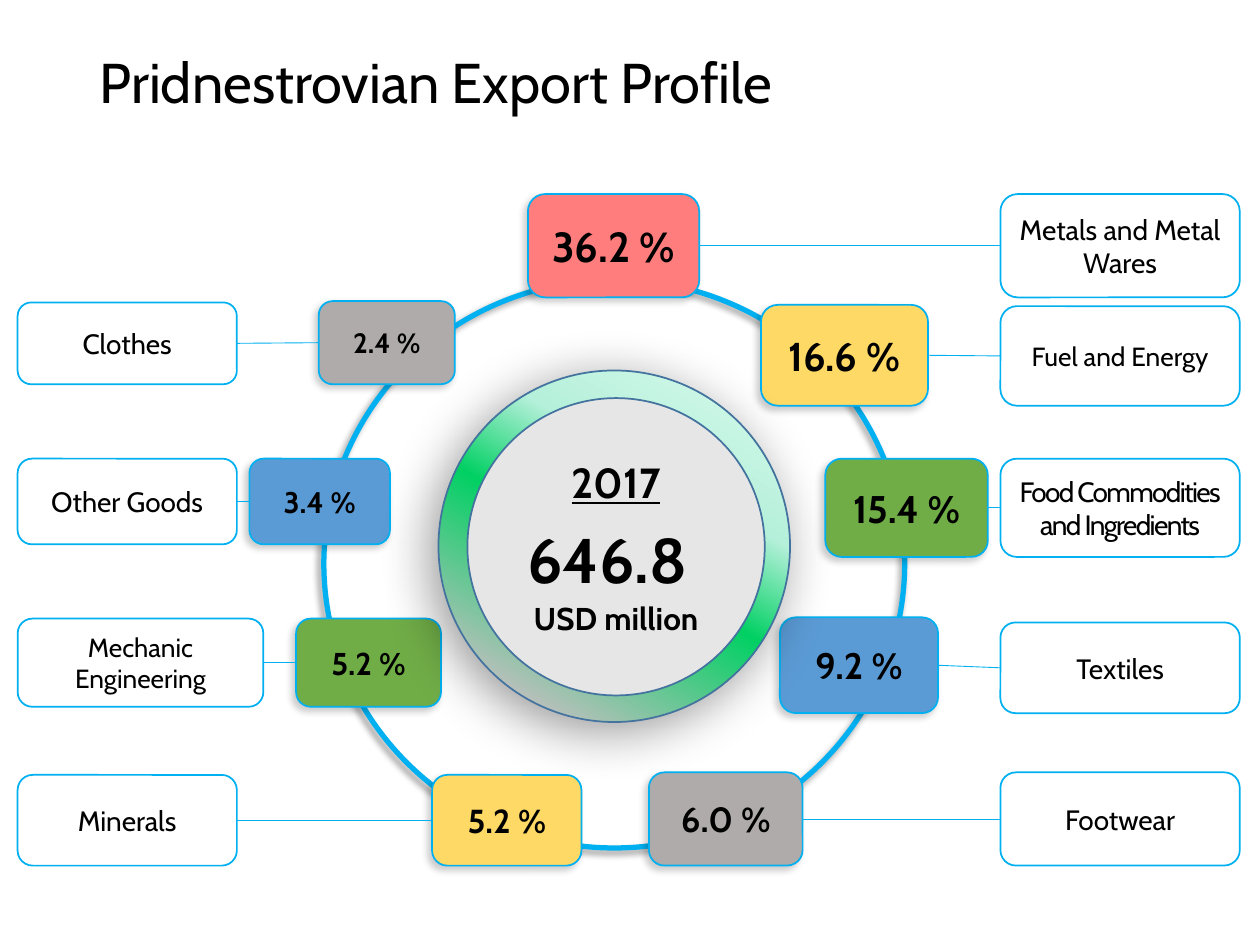
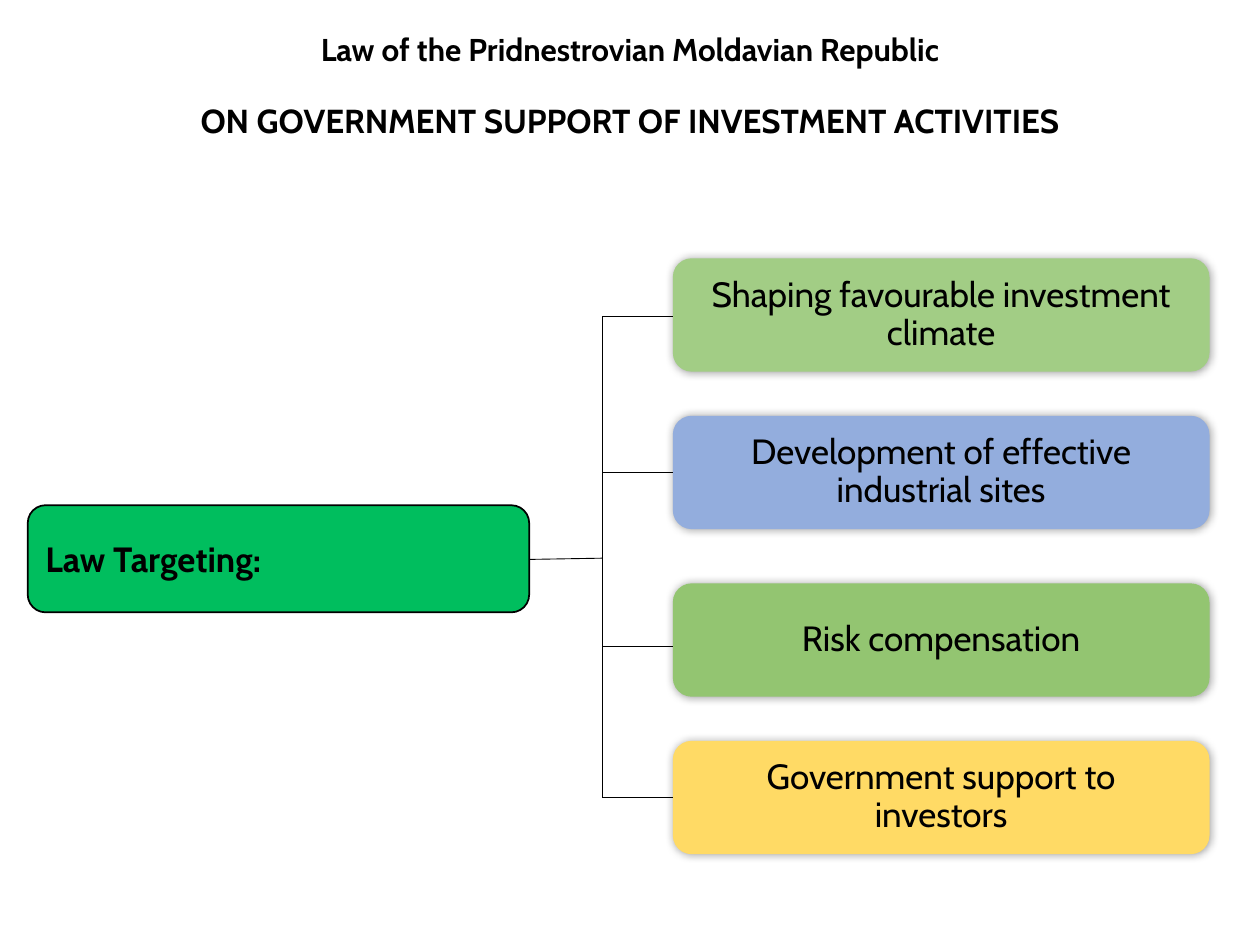
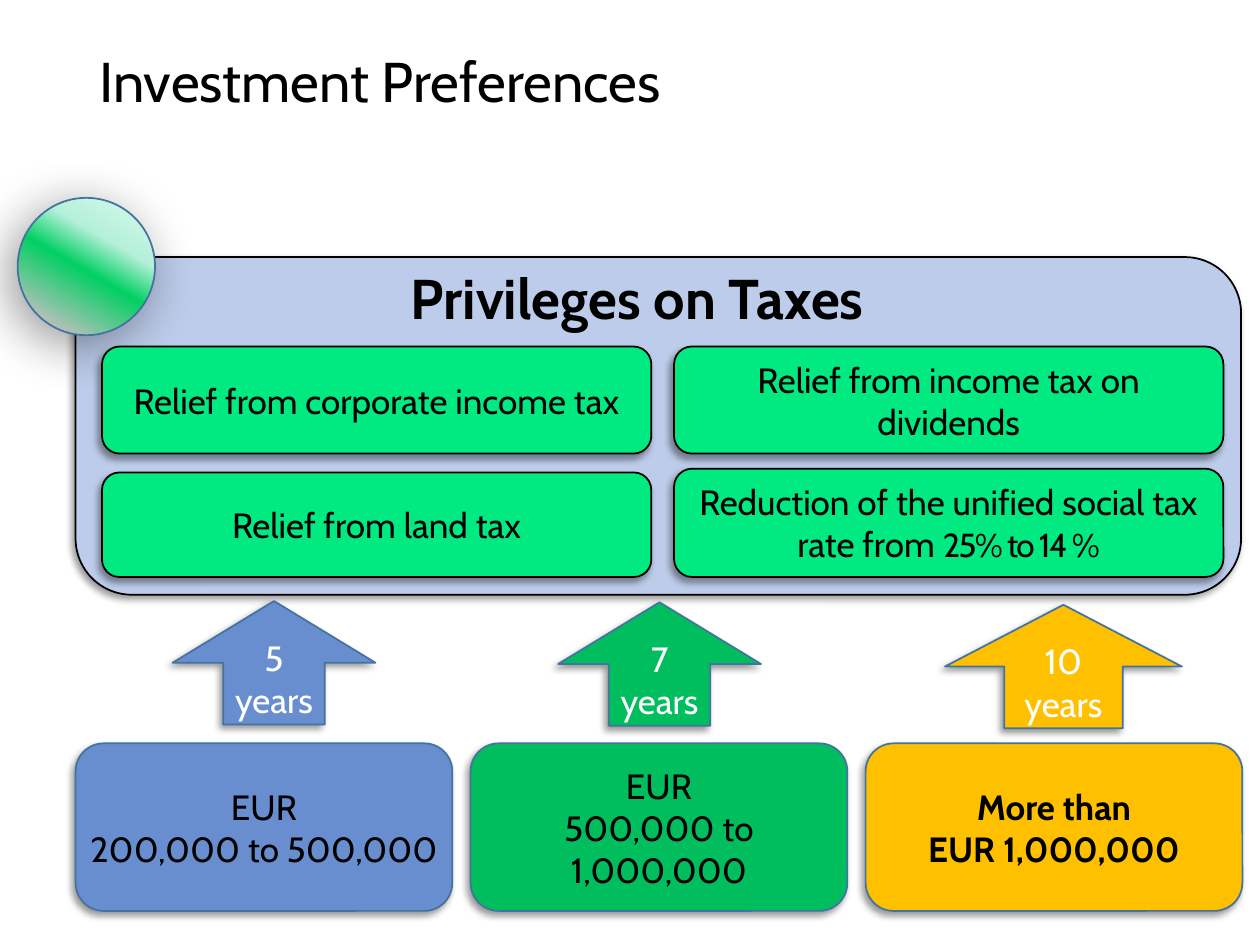
from copy import deepcopy

from lxml import etree
from pptx import Presentation
from pptx.dml.color import RGBColor
from pptx.enum import shapes, text
from pptx.oxml.ns import qn
from pptx.util import Inches, Pt

FONT = "Cabin"
COLOURS = {
    "black": "000000", "white": "FFFFFF", "sky": "00B0F0", "navy": "43739E",
    "red": "FF7D7D", "yellow": "FFD966", "green": "70AD47", "blue": "5B9BD5",
    "grey": "AFABAB", "pale grey": "E7E6E6", "emerald": "00BE5E",
    "mint": "01EA81", "leaf": "A2CD85", "periwinkle": "93ADDD",
    "moss": "93C571", "gold": "FFDA65", "lavender": "BCCCEA",
    "cobalt": "698ED0", "amber": "FFC000",
}
SPHERE_STOPS = [(0.12, "BFBFBF"), (0.48, "01D063"), (0.68, "B5F0DA"), (1, "DAFAED")]

# Shadows: opacity in percent, blur and distance in points, direction in degrees
LIGHT = (20, 4, 3, 135)
SOFT = (40, 4, 3, 135)
HALO = (40, 5, 0, 0)
DEEP = (40, 30, 7, 135)

RECT = shapes.MSO_SHAPE.ROUNDED_RECTANGLE
OVAL = shapes.MSO_SHAPE.OVAL
ARROW = shapes.MSO_SHAPE.UP_ARROW
LEFT, CENTER = text.PP_ALIGN.LEFT, text.PP_ALIGN.CENTER

# Largest share first: share, left, top, colour, label, label side, label top, label size
EXPORTS = [
    ("36.2 %", 4.19, 1.54, "red", "Metals and Metal Wares", "right", 1.54, 16),
    ("16.6 %", 6.04, 2.42, "yellow", "Fuel and Energy", "right", 2.43, 15),
    ("15.4 %", 6.55, 3.64, "green", "Food Commodities\nand Ingredients", "right", 3.64, 16),
    ("9.2 %", 6.19, 4.9, "blue", "Textiles", "right", 4.94, 16),
    ("6.0 %", 5.15, 6.13, "grey", "Footwear", "right", 6.13, 16),
    ("5.2 %", 3.43, 6.15, "yellow", "Minerals", "left", 6.15, 16),
    ("5.2 %", 2.35, 4.91, "green", "Mechanic Engineering", "wide left", 4.91, 15),
    ("3.4 %", 1.98, 3.64, "blue", "Other Goods", "left", 3.64, 16),
    ("2.4 %", 2.53, 2.39, "grey", "Clothes", "left", 2.4, 16),
]
LABEL_SPANS = {"right": (7.94, 1.9), "left": (0.14, 1.74), "wide left": (0.14, 1.95)}
TIGHT_LABEL = "Food Commodities\nand Ingredients"

LAW_TITLE = [
    ("Law of the Pridnestrovian Moldavian Republic", 18),
    ("ON GOVERNMENT SUPPORT OF INVESTMENT ACTIVITIES", 19),
]
# Goal, box top, branch height, colour
GOALS = [
    ("Shaping favourable investment climate", 2.05, 2.51, "leaf"),
    ("Development of effective industrial sites", 3.3, 3.75, "periwinkle"),
    ("Risk compensation", 4.63, 5.13, "moss"),
    ("Government support to investors", 5.88, 6.33, "gold"),
]

# Privilege, tightly set ending, left, top, height
PRIVILEGES = [
    ("Relief from corporate income tax", "", 0.81, 2.75, 0.85),
    ("Relief from land tax", "", 0.81, 3.75, 0.83),
    ("Reduction of the unified social tax rate from ", "25% to 14 %", 5.35, 3.72, 0.86),
    ("Relief from income tax on dividends", "", 5.35, 2.75, 0.85),
]
# Investment, bold, term, colour, arrow left, arrow top, arrow width
TIERS = [
    ("EUR\n200,000 to 500,000", False, "5\nyears", "cobalt", 1.37, 4.77, 1.61),
    ("EUR\n500,000 to 1,000,000", False, "7\nyears", "emerald", 4.43, 4.78, 1.61),
    ("More than\nEUR 1,000,000", True, "10\nyears", "amber", 7.5, 4.8, 1.88),
]


def rgb(name):
    return RGBColor.from_string(COLOURS[name])


def write(frame, content, size, colour="black", bold=False, align=CENTER, insets=None):
    """Put each line of content in its own paragraph."""
    frame.word_wrap = True
    if insets is not None:
        frame.margin_left = frame.margin_right = Inches(insets)
        frame.margin_top = frame.margin_bottom = 0
    for index, line in enumerate(content.split("\n")):
        para = frame.add_paragraph() if index else frame.paragraphs[0]
        para.text = line
        para.alignment = align
        para.font.name = FONT
        para.font.size = Pt(size)
        para.font.bold = bold
        para.font.color.rgb = rgb(colour)


def tighten(span):
    span._r.get_or_add_rPr().set("spc", "-90")


def cast_shadow(shape, opacity, blur, distance, direction):
    effects = shape._element.spPr.find(qn("a:effectLst"))
    shadow = etree.SubElement(
        effects, qn("a:outerShdw"), blurRad=str(Pt(blur)), dist=str(Pt(distance)),
        dir=str(direction * 60000), algn="ctr", rotWithShape="0")
    colour = etree.SubElement(shadow, qn("a:srgbClr"), val=COLOURS["black"])
    etree.SubElement(colour, qn("a:alpha"), val=str(opacity * 1000))


def add_shape(slide, kind, left, top, width, height, fill=None, line=None,
              line_width=1, shadow=None):
    shape = slide.shapes.add_shape(kind, *map(Inches, (left, top, width, height)))
    if fill:
        shape.fill.solid()
        shape.fill.fore_color.rgb = rgb(fill)
    else:
        shape.fill.background()
    if line:
        shape.line.color.rgb = rgb(line)
        shape.line.width = Pt(line_width)
    else:
        shape.line.fill.background()
    shape.shadow.inherit = False
    if shadow:
        cast_shadow(shape, *shadow)
    return shape


def add_sphere(slide, left, top, size):
    sphere = add_shape(slide, OVAL, left, top, size, size, line="navy", shadow=DEEP)
    sphere.fill.gradient()
    sphere.fill.gradient_angle = 60
    stops = sphere._element.spPr.find(qn("a:gradFill")).find(qn("a:gsLst"))
    for _ in range(len(SPHERE_STOPS) - len(stops)):
        stops.append(deepcopy(stops[0]))
    for stop, (position, colour) in zip(sphere.fill.gradient_stops, SPHERE_STOPS):
        stop.position = position
        stop.color.rgb = RGBColor.from_string(colour)


def add_line(slide, x1, y1, x2, y2, colour):
    line = slide.shapes.add_connector(
        shapes.MSO_CONNECTOR.STRAIGHT, *map(Inches, (x1, y1, x2, y2)))
    line.line.color.rgb = rgb(colour)
    line.line.width = Pt(0.5)
    etree.SubElement(line._element.spPr, qn("a:effectLst"))


def add_slide(deck, title, left=0.69, top=0.1, width=8.62, height=1.16,
              size=32, bold=False, align=LEFT):
    slide = deck.slides.add_slide(deck.slide_layouts[5])
    box = slide.shapes.title
    box.left, box.top, box.width, box.height = map(Inches, (left, top, width, height))
    frame = box.text_frame
    frame.auto_size = text.MSO_AUTO_SIZE.NONE
    frame.vertical_anchor = text.MSO_ANCHOR.MIDDLE
    write(frame, title, size, bold=bold, align=align)
    for para in frame.paragraphs:
        para.line_spacing = 0.9
    return slide


def build_export_profile(deck):
    slide = add_slide(deck, "Pridnestrovian Export Profile")
    add_shape(slide, OVAL, 2.57, 2.22, 4.61, 4.51, line="sky", line_width=3, shadow=SOFT)
    for rank, (share, left, top, colour, label, side, label_top, label_size) in enumerate(EXPORTS):
        width, height = 1.36 - 0.035 * rank, 0.82 - 0.02 * rank
        box = add_shape(slide, RECT, left, top, width, height, colour, "sky", shadow=LIGHT)
        write(box.text_frame, share, 24 - rank, bold=True)

        label_left, label_width = LABEL_SPANS[side]
        label_height = top + height - label_top
        box = add_shape(slide, RECT, label_left, label_top, label_width, label_height, line="sky")
        write(box.text_frame, label, label_size)
        if label == TIGHT_LABEL:
            for para in box.text_frame.paragraphs:
                tighten(para.runs[0])

        if side == "right":
            start, end = left + width, label_left
        else:
            start, end = left, label_left + label_width
        add_line(slide, start, top + height / 2, end, label_top + label_height / 2, "sky")

    add_sphere(slide, 3.48, 2.94, 2.79)
    total = add_shape(slide, OVAL, 3.71, 3.16, 2.36, 2.36, "pale grey", "navy")
    write(total.text_frame, "2017\n646.8\nUSD million", 18, bold=True)
    year, amount, _ = total.text_frame.paragraphs
    year.font.size = Pt(24)
    year.font.underline = True
    amount.font.size = Pt(36)
    gap = amount.add_run()
    gap.text = " "
    gap.font.size = Pt(44)


def build_law(deck):
    title = "\n".join(line for line, _ in LAW_TITLE)
    slide = add_slide(deck, title, -0.08, 0.27, 10.16, 1.14, bold=True, align=CENTER)
    frame = slide.shapes.title.text_frame
    frame.vertical_anchor = text.MSO_ANCHOR.TOP
    frame.margin_top = 0
    for para, (_, size) in zip(frame.paragraphs, LAW_TITLE):
        para.font.size = Pt(size)
    frame.paragraphs[1].space_before = Pt(21)

    target = add_shape(slide, RECT, 0.22, 4.01, 3.98, 0.85, "emerald", "black")
    write(target.text_frame, "Law Targeting:", 20, bold=True, align=LEFT)
    trunk, goal_left = 4.78, 5.34
    for goal, top, branch, colour in GOALS:
        box = add_shape(slide, RECT, goal_left, top, 4.26, 0.9, colour, shadow=HALO)
        write(box.text_frame, goal, 20, insets=0.2)
        box.text_frame.paragraphs[0].line_spacing = 0.9
        add_line(slide, goal_left, branch, trunk, branch, "black")
    add_line(slide, trunk, GOALS[0][2], trunk, GOALS[-1][2], "black")
    add_line(slide, 4.2, 4.44, trunk, 4.43, "black")


def build_preferences(deck):
    slide = add_slide(deck, "Investment Preferences", top=0, height=1.34)
    add_shape(slide, RECT, 0.6, 2.04, 9.25, 2.68, "lavender", "black", shadow=SOFT)
    add_sphere(slide, 0.14, 1.57, 1.09)
    for privilege, ending, left, top, height in PRIVILEGES:
        box = add_shape(slide, RECT, left, top, 4.36, height, "mint", "black", shadow=SOFT)
        write(box.text_frame, privilege, 20)
        if ending:
            span = box.text_frame.paragraphs[0].add_run()
            span.text = ending
            span.font.size = Pt(19)
            tighten(span)
    heading = slide.shapes.add_textbox(*map(Inches, (3.16, 2.04, 4.18, 0.64)))
    write(heading.text_frame, "Privileges on Taxes", 32, bold=True, align=LEFT)

    for column, (amount, bold, term, colour, left, top, width) in enumerate(TIERS):
        box = add_shape(slide, RECT, 0.6 + 3.135 * column, 5.9, 2.99, 1.33,
                        colour, "navy", shadow=SOFT)
        write(box.text_frame, amount, 20, bold=bold, insets=0)
        arrow = add_shape(slide, ARROW, left, top, width, 0.98, colour, "navy", shadow=SOFT)
        write(arrow.text_frame, term, 20, "white", insets=0)


def main():
    deck = Presentation()
    deck.slide_width, deck.slide_height = Inches(10), Inches(7.5)
    build_export_profile(deck)
    build_law(deck)
    build_preferences(deck)
    deck.save("out.pptx")


if __name__ == "__main__":
    main()
